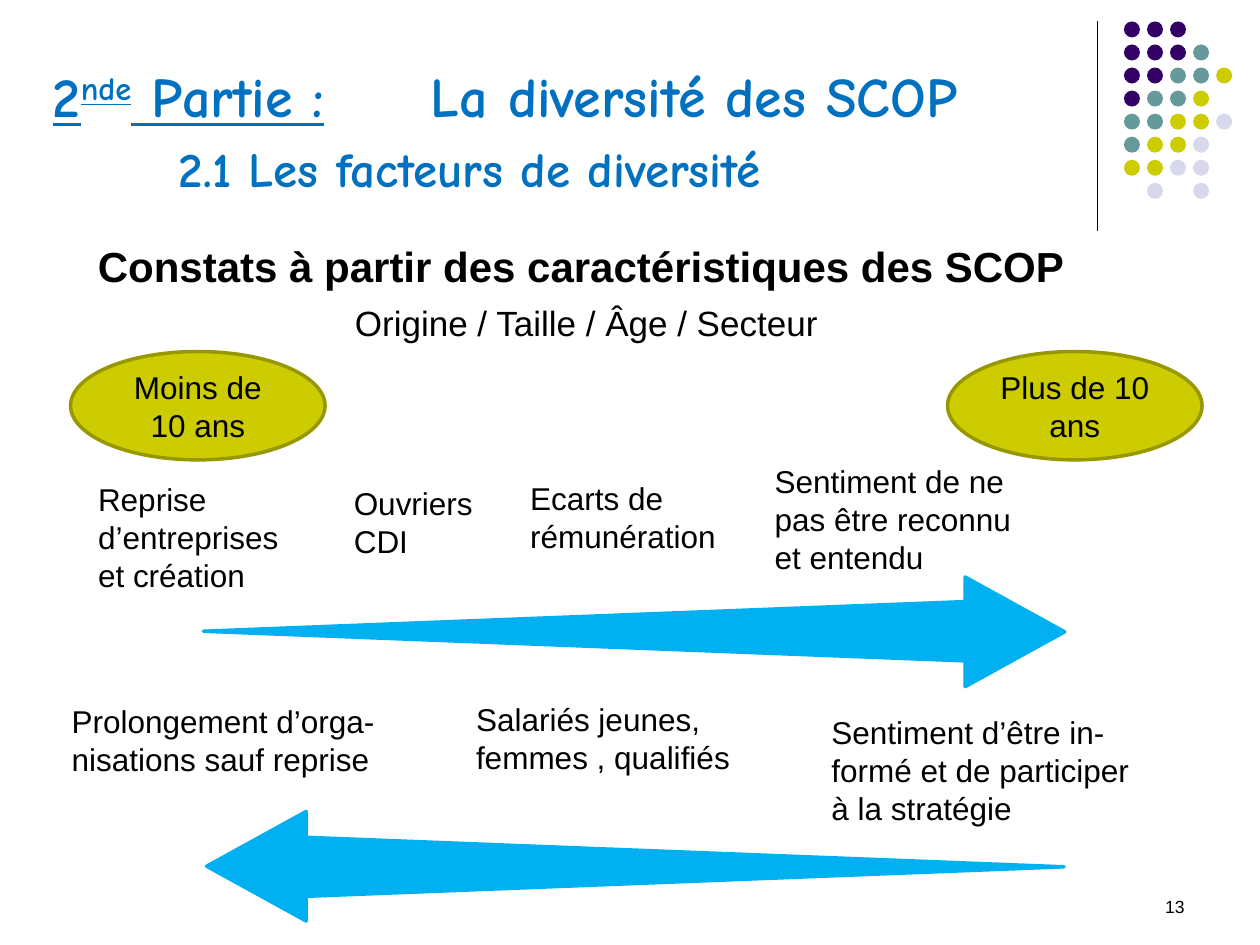
from pptx import Presentation, util as u
from pptx.dml.color import RGBColor
from pptx.enum import shapes as es, text as et
from pptx.oxml.ns import qn
from lxml import etree

theme = {
    "sans": "Arial", "comic": "Comic Neue",
    "black": "000000", "title": "0070C0", "arrow": "00B0F0",
    "oval": "CCCC00", "edge": "979700",
    "dots": {"p": "330066", "t": "669999", "y": "CCCC00", "l": "D8D8EC"},
    "head": 32, "sub": 28, "lead": 24, "list": 20, "body": 18, "page": 10,
}
deck = Presentation()
deck.slide_width, deck.slide_height = u.Inches(10), u.Inches(7.5)
col, row = deck.slide_width / 100, deck.slide_height / 75
slide = deck.slides.add_slide(deck.slide_layouts[5])
mid, right = et.PP_ALIGN.CENTER, et.PP_ALIGN.RIGHT


def cells(x, y, w, h):
    return int(x * col), int(y * row), int(w * col), int(h * row)


def write(para, words, size="body", face="sans", color="black", bold=False,
          line=False, base=0, align=None, gap=0):
    run = para.add_run()
    run.text = words
    font = run.font
    font.size, font.name = u.Pt(theme[size]), theme[face]
    font.bold, font.underline = bold, line
    font.color.rgb = RGBColor.from_string(theme[color])
    if base:
        run._r.get_or_add_rPr().set("baseline", str(base * 1000))
    para.alignment = align
    para.space_after = u.Pt(gap)


rule = slide.shapes.add_connector(
    es.MSO_CONNECTOR.STRAIGHT, *cells(87.1, 1.7, 87.1, 18.3))
rule.line.color.rgb = RGBColor.from_string(theme["black"])
rule.line.width = u.Pt(0.75)
etree.SubElement(rule._element.spPr, qn("a:effectLst"))

dots = slide.shapes.add_group_shape()
grid = ["ppp", "pppt", "pptty", "ptty", "ttyyl", "tyyl", "yyll", " l l"]
for r, marks in enumerate(grid):
    for c, mark in enumerate(marks):
        if mark != " ":
            dot = dots.shapes.add_shape(
                es.MSO_SHAPE.OVAL,
                *cells(89.2 + 1.83 * c, 1.7 + 1.83 * r, 1.27, 1.27))
            dot.shadow.inherit = False
            dot.fill.solid()
            dot.fill.fore_color.rgb = RGBColor.from_string(theme["dots"][mark])
            dot.line.fill.background()

title = slide.shapes.title
title.left, title.top, title.width, title.height = cells(3.2, 4.4, 83.5, 11.8)
frame = title.text_frame
frame.word_wrap, frame.auto_size = True, et.MSO_AUTO_SIZE.NONE
frame.vertical_anchor = et.MSO_ANCHOR.BOTTOM
first, second = frame.paragraphs[0], frame.add_paragraph()
look = dict(face="comic", color="title", bold=True, align=et.PP_ALIGN.LEFT)
for words, line, base in [("2", True, 0), ("nde", True, 30),
                          (" Partie :", True, 0),
                          ("\tLa diversité des SCOP", False, 0)]:
    write(first, words, size="head", line=line, base=base, gap=6, **look)
write(second, "\t2.1 Les facteurs de diversité", size="sub", **look)
for para, stop in [(first, 30), (second, 10)]:
    tabs = etree.SubElement(para._p.get_or_add_pPr(), qn("a:tabLst"))
    etree.SubElement(tabs, qn("a:tab"), pos=str(int(stop * col)), algn="l")

body = {}
notes = [
    ((84.7, 70.6, 10.3, 2.8), [("13", dict(size="page", align=right))]),
    ((5.4, 18.6, 82.3, 9.3), [
        ("Constats à partir des caractéristiques des SCOP ",
         dict(size="lead", bold=True, align=mid, gap=6)),
        ("Origine / Taille / Âge / Secteur", dict(size="list", align=mid))]),
    ((4.7, 55.2, 28.7, 7.1),
     [("Prolongement d’orga-nisations sauf reprise", body)]),
    ((6.8, 37.6, 17.3, 10.1), [("Reprise d’entreprises et création", body)]),
    ((36.8, 55.1, 22.3, 7.1), [("Salariés jeunes, femmes , qualifiés", body)]),
    ((27.1, 37.9, 12.6, 7.1), [("Ouvriers", body), ("CDI", body)]),
    ((41.1, 37.5, 18, 7.1), [("Ecarts de rémunération", body)]),
    ((65, 56.1, 26.7, 10.1),
     [("Sentiment d’être in-formé et de participer à la stratégie", body)]),
    ((60.5, 36.2, 22.3, 10.1),
     [("Sentiment de ne pas être reconnu et entendu", body)]),
]
for place, lines in notes:
    frame = slide.shapes.add_textbox(*cells(*place)).text_frame
    frame.word_wrap = True
    for n, (words, form) in enumerate(lines):
        para = frame.add_paragraph() if n else frame.paragraphs[0]
        write(para, words, **form)

oval, wedge = es.MSO_SHAPE.OVAL, es.MSO_SHAPE.ISOSCELES_TRIANGLE
forms = [
    (oval, (5.6, 27.9, 20.2, 8.6), 0, "oval", "edge", "Moins de 10 ans"),
    (oval, (75.2, 27.9, 20.2, 8.6), 0, "oval", "edge", "Plus de 10 ans"),
    (wedge, (44, 19.9, 4.7, 60.4), 270, "arrow", "arrow", ""),
    (wedge, (76.2, 46.2, 8.7, 7.9), 90, "arrow", "arrow", ""),
    (wedge, (51.9, 38.6, 4.7, 60.4), 90, "arrow", "arrow", ""),
    (wedge, (16, 64.8, 8.7, 7.9), 270, "arrow", "arrow", ""),
]
for kind, place, turn, fill, edge, words in forms:
    form = slide.shapes.add_shape(kind, *cells(*place))
    form.shadow.inherit = False
    form.rotation = turn
    form.fill.solid()
    form.fill.fore_color.rgb = RGBColor.from_string(theme[fill])
    form.line.color.rgb = RGBColor.from_string(theme[edge])
    form.line.width = u.Pt(2)
    if words:
        form.text_frame.vertical_anchor = et.MSO_ANCHOR.MIDDLE
        write(form.text_frame.paragraphs[0], words, align=mid)

deck.save("out.pptx")
